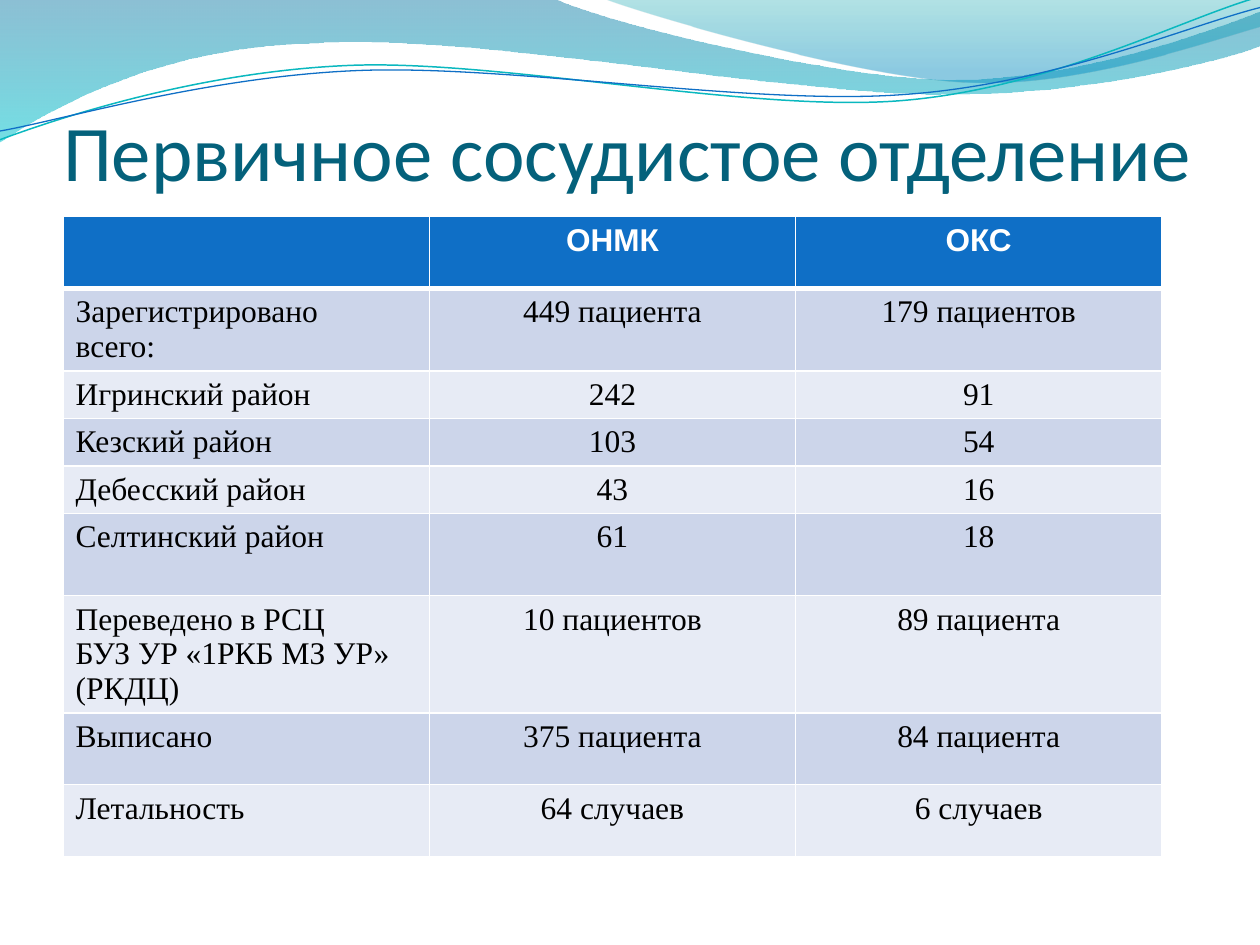
import pptx
import pptx.util
import pptx.dml.color
import pptx.enum.text
import pptx.oxml
import pptx.oxml.ns

Pt = pptx.util.Pt
qn = pptx.oxml.ns.qn
ALIGN = pptx.enum.text.PP_ALIGN
ANCHOR = pptx.enum.text.MSO_ANCHOR
NS = pptx.oxml.ns.nsdecls("a")

TITLE = "Первичное сосудистое отделение"
ROWS = [
    (41, "", "ОНМК", "ОКС"),
    (47, "Зарегистрировано\nвсего:", "449 пациента", "179 пациентов"),
    (27, "Игринский район", "242", "91"),
    (27, "Кезский район", "103", "54"),
    (27, "Дебесский район", "43", "16"),
    (47, "Селтинский район", "61", "18"),
    (67, "Переведено в РСЦ\nБУЗ УР «1РКБ МЗ УР» (РКДЦ)", "10 пациентов", "89 пациента"),
    (41, "Выписано", "375 пациента", "84 пациента"),
    (41, "Летальность", "64 случаев", "6 случаев"),
]
HEADER, BANDS = "0F6FC6", ("CCD5EA", "E7EBF5")

WAVES = [
    ((0, 0), [
        [(316.8, -0.7)],
        [(342.7, 12.2), (478.1, 45.4), (545.8, 45.4)],
        [(614.2, 45.4), (689.8, 18.7), (720, 6.5)],
        [(720.7, 25.9)],
        [(707.8, 31.7), (626.4, 54.7), (537.1, 54)],
        [(447.8, 54), (275, 20.2), (185, 24.5)],
        [(92.9, 25.9), (33.1, 59.8), (-0.7, 81.4)],
    ], [(0, "0074A1", 45), (1, "00C6CF", 55)]),
    ((344.9, -0.7), [
        [(366.5, 7.9), (491, 44.6), (553.7, 46.8)],
        [(616.3, 49.7), (691.9, 23), (720, 15.1)],
        [(720, 0)],
    ], [(0, "00A1A9", 30), (0.8, "008BBF", 45)]),
]
STRAND_ROTATION = 357.3
STRANDS = [
    ((-1.4, 62.9), [
        [(33.8, 51.7), (114.1, 29.4), (199.8, 29.9)],
        [(284.9, 30.3), (425.8, 67.3), (512.4, 64.9)],
        [(599, 62.4), (676.5, 25.7), (720.2, 15.5)],
    ], "0AB8BF", 0.85),
    ((-1.1, 57.9), [
        [(32.9, 53.7), (118.3, 32.5), (204.1, 33)],
        [(290.6, 33.4), (428.9, 63.8), (515.5, 61.4)],
        [(601.4, 59.6), (678.4, 30.1), (721.4, 21.3)],
    ], "0F6FC6", 0.75),
]


def rgb(value):
    return pptx.dml.color.RGBColor.from_string(value)


def add_outline(s, start, segments, close):
    builder = s.shapes.build_freeform(Pt(start[0]), Pt(start[1]))
    builder.add_line_segments(
        [(Pt(x), Pt(y)) for segment in segments for x, y in segment], close=close)
    sp = builder.convert_to_shape()
    sp.shadow.inherit = False
    lines = iter(list(sp._element.iter(qn("a:lnTo"))))
    for segment in segments:
        parts = [next(lines) for _ in segment]
        if len(parts) == 3:
            curve = pptx.oxml.parse_xml(f"<a:cubicBezTo {NS}/>")
            parts[0].addprevious(curve)
            for part in parts:
                curve.append(part[0])
                part.getparent().remove(part)
    return sp


def add_wave(s, start, segments, stops):
    sp = add_outline(s, start, segments, True)
    sp.line.fill.background()
    sp.fill.gradient()
    sp.fill.gradient_angle = 270
    for stop, (position, color, opacity) in zip(sp.fill.gradient_stops, stops):
        stop.position = position
        stop.color.rgb = rgb(color)
        alpha = pptx.oxml.parse_xml(f'<a:alpha {NS} val="{opacity * 1000}"/>')
        stop._gs[0].append(alpha)


def add_strand(s, start, segments, color, width):
    sp = add_outline(s, start, segments, False)
    sp.rotation = STRAND_ROTATION
    sp.fill.background()
    sp.line.color.rgb = rgb(color)
    sp.line.width = Pt(width)


def add_run(p, text, font, size, color, bold=False):
    r = p.add_run()
    r.text = text
    r.font.name, r.font.size, r.font.bold = font, Pt(size), bold
    r.font.color.rgb = rgb(color)


def set_borders(cell, bottom, top):
    tcPr = cell._tc.get_or_add_tcPr()
    for i, (side, width) in enumerate((("L", 1), ("R", 1), ("T", top), ("B", bottom))):
        tcPr.insert(i, pptx.oxml.parse_xml(
            f'<a:ln{side} {NS} w="{Pt(width)}"><a:solidFill>'
            f'<a:srgbClr val="FFFFFF"/></a:solidFill></a:ln{side}>'))


def add_title(s):
    sp = s.shapes.title
    sp.left, sp.top, sp.width, sp.height = Pt(36), Pt(55.6), Pt(648), Pt(57)
    tf = sp.text_frame
    tf.margin_left = tf.margin_right = tf.margin_bottom = 0
    tf.margin_top = Pt(3.6)
    tf.vertical_anchor = ANCHOR.BOTTOM
    tf.auto_size = pptx.enum.text.MSO_AUTO_SIZE.NONE
    tf.word_wrap = True
    p = tf.paragraphs[0]
    p.alignment = ALIGN.LEFT
    add_run(p, TITLE, "Calibri", 45, "04617B")
    s.shapes._spTree.append(sp._element)


def add_patients(s):
    height = sum(row[0] for row in ROWS)
    table = s.shapes.add_table(len(ROWS), 3, Pt(36), Pt(123.8), Pt(628), Pt(height)).table
    for i, (row_height, *texts) in enumerate(ROWS):
        table.rows[i].height = Pt(row_height)
        head = i == 0
        for j, text in enumerate(texts):
            cell = table.cell(i, j)
            cell.fill.solid()
            cell.fill.fore_color.rgb = rgb(HEADER if head else BANDS[(i - 1) % 2])
            set_borders(cell, bottom=3 if head else 1, top=3 if i == 1 else 1)
            tf = cell.text_frame
            for k, line in enumerate(text.split("\n") if text else []):
                p = tf.add_paragraph() if k else tf.paragraphs[0]
                p.alignment = ALIGN.CENTER if j else ALIGN.LEFT
                if head:
                    add_run(p, line, "Arial", 18, "FFFFFF", True)
                else:
                    add_run(p, line, "Times New Roman", 18, "000000")


def main():
    prs = pptx.Presentation()
    prs.slide_width, prs.slide_height = Pt(720), Pt(540)
    s = prs.slides.add_slide(prs.slide_layouts[5])
    for wave in WAVES:
        add_wave(s, *wave)
    for strand in STRANDS:
        add_strand(s, *strand)
    add_title(s)
    add_patients(s)
    prs.save("out.pptx")


if __name__ == "__main__":
    main()
